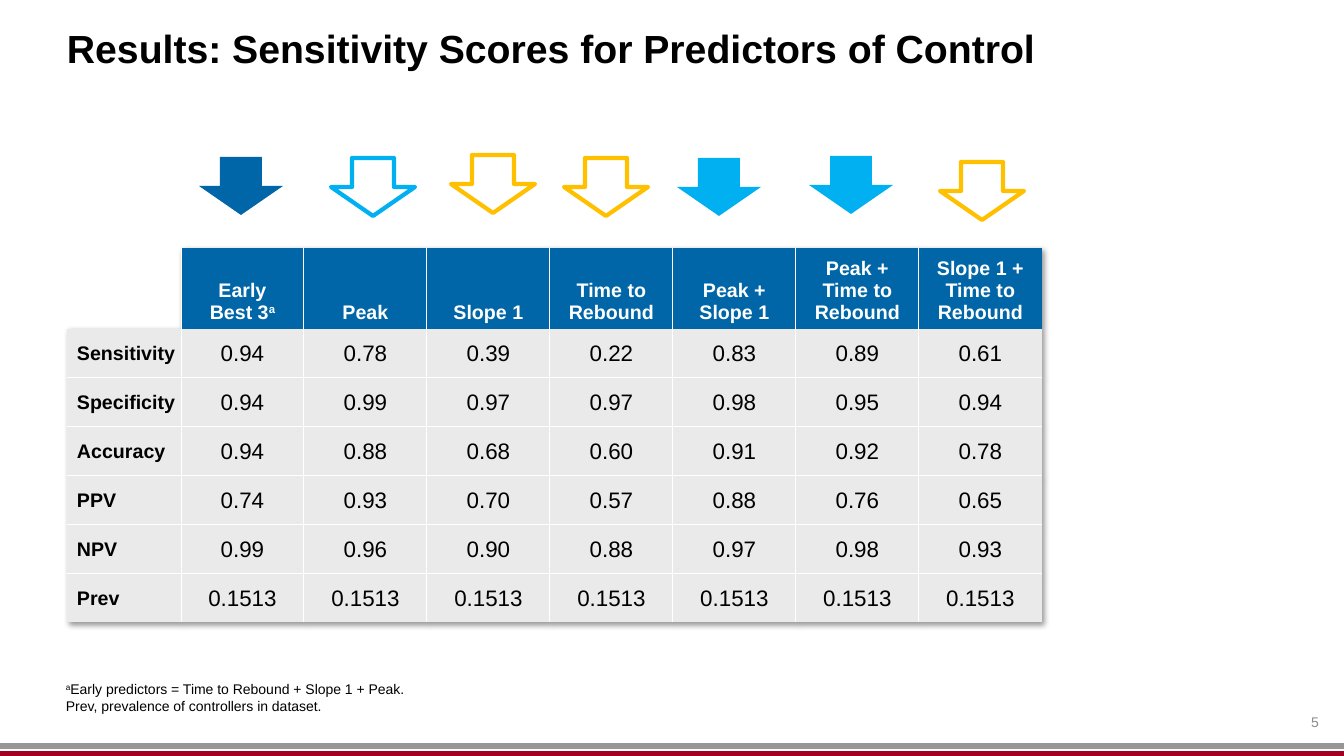
from lxml.etree import SubElement
from pptx import Presentation
from pptx.dml.color import RGBColor
from pptx.enum.shapes import MSO_CONNECTOR, MSO_SHAPE
from pptx.enum.text import MSO_ANCHOR, PP_ALIGN
from pptx.oxml import parse_xml
from pptx.oxml.ns import nsdecls, qn
from pptx.util import Pt

PX = 914400 / 100.8
SLIDE_SIZE = (1344, 756)

TITLE = "Results: Sensitivity Scores for Predictors of Control"
FOOTNOTE = ("^aEarly predictors = Time to Rebound + Slope 1 + Peak.\n"
            "Prev, prevalence of controllers in dataset.")
PAGE_NUMBER = "5"
PREDICTORS = ["Early\nBest 3^a", "Peak", "Slope 1", "Time to Rebound",
              "Peak + Slope 1", "Peak + Time to Rebound",
              "Slope 1 + Time to Rebound"]
SCORES = [
    ("Sensitivity", "0.94", "0.78", "0.39", "0.22", "0.83", "0.89", "0.61"),
    ("Specificity", "0.94", "0.99", "0.97", "0.97", "0.98", "0.95", "0.94"),
    ("Accuracy", "0.94", "0.88", "0.68", "0.60", "0.91", "0.92", "0.78"),
    ("PPV", "0.74", "0.93", "0.70", "0.57", "0.88", "0.76", "0.65"),
    ("NPV", "0.99", "0.96", "0.90", "0.88", "0.97", "0.98", "0.93"),
    ("Prev",) + ("0.1513",) * len(PREDICTORS),
]
BLUE, SKY, GOLD = "0066A8", "00B0F0", "FFC000"
BLACK, WHITE, CELL_GREY = "000000", "FFFFFF", "EAEAEA"
ARROWS = [
    (199, 157, BLUE, True),
    (331, 158, SKY, False),
    (451, 155, GOLD, False),
    (564, 158, GOLD, False),
    (677, 158, SKY, True),
    (809, 156, SKY, True),
    (940, 162, GOLD, False),
]
ARROW_SIZE = (84, 58)
FOOTER_RULES = [(746, "969696"), (754, "A50021")]
TABLE_LEFT, TABLE_TOP = 67, 248
LABEL_WIDTH, SCORE_WIDTH = 114, 123
HEADER_HEIGHT, ROW_HEIGHT = 60, 49

TITLE_FORMAT = {"size": Pt(28), "bold": True}
NOTE_FORMAT = {"size": Pt(10), "bold": False}
HEADING_FORMAT = {"size": Pt(14), "bold": True}
SCORE_FORMAT = {"size": Pt(16), "bold": False}


def px(*lengths):
    return [round(length * PX) for length in lengths]


def rgb(hex_color):
    return RGBColor.from_string(hex_color)


def apply(target, values):
    for name, value in values.items():
        setattr(target, name, value)


def margins(left, top, right, bottom):
    names = ("margin_left", "margin_top", "margin_right", "margin_bottom")
    return dict(zip(names, px(left, top, right, bottom)))


def write(frame, text, font_format, color, align):
    for number, line in enumerate(text.split("\n")):
        paragraph = frame.add_paragraph() if number else frame.paragraphs[0]
        paragraph.alignment = align
        first, *marked = line.split("^")
        pieces = [(first, False)]
        for piece in marked:
            pieces += [(piece[0], True), (piece[1:], False)]
        for words, raised in pieces:
            if not words:
                continue
            run = paragraph.add_run()
            run.text = words
            apply(run.font, {"name": "Arial", **font_format})
            run.font.color.rgb = rgb(color)
            if raised:
                run._r.get_or_add_rPr().set("baseline", "30000")


def add_text(slide, box, text, font_format, color, align, anchor, insets):
    frame = slide.shapes.add_textbox(*px(*box)).text_frame
    apply(frame, {"word_wrap": True, "vertical_anchor": anchor,
                  **margins(*insets)})
    write(frame, text, font_format, color, align)
    return frame


def add_footer_rule(slide, y, color):
    rule = slide.shapes.add_connector(
        MSO_CONNECTOR.STRAIGHT, *px(0, y, SLIDE_SIZE[0], y))
    rule.line.color.rgb = rgb(color)
    rule.line.width = Pt(4.25)
    SubElement(rule._element.spPr, qn("a:effectLst"))


def add_arrow(slide, left, top, color, filled):
    arrow = slide.shapes.add_shape(
        MSO_SHAPE.DOWN_ARROW, *px(left, top, *ARROW_SIZE))
    arrow.shadow.inherit = False
    if filled:
        arrow.fill.solid()
        arrow.fill.fore_color.rgb = rgb(color)
        arrow.line.fill.background()
    else:
        arrow.fill.background()
        arrow.line.color.rgb = rgb(color)
        arrow.line.width = Pt(3)


def add_borders(cell, sides):
    for side, shown in sides.items():
        border = SubElement(cell._tc.get_or_add_tcPr(), qn(f"a:ln{side}"),
                            w=str(Pt(0.75)))
        if shown:
            paint = SubElement(border, qn("a:solidFill"))
            SubElement(paint, qn("a:srgbClr"), val=WHITE)
        else:
            SubElement(border, qn("a:noFill"))


def add_scores(slide):
    rows = [("", *PREDICTORS), *SCORES]
    last_row, last_column = len(SCORES), len(PREDICTORS)
    width = LABEL_WIDTH + SCORE_WIDTH * last_column
    height = HEADER_HEIGHT + ROW_HEIGHT * last_row
    table = slide.shapes.add_table(
        len(rows), last_column + 1,
        *px(TABLE_LEFT, TABLE_TOP, width, height)).table
    apply(table, {"first_row": False, "horz_banding": False})
    properties = table._tbl.tblPr
    properties.find(qn("a:tableStyleId")).text = (
        "{2D5ABB26-0587-4C30-8999-92F81FD0307C}")
    properties.insert(0, parse_xml(
        f'<a:effectLst {nsdecls("a")}><a:outerShdw blurRad="50800" '
        'dist="38100" dir="2700000" algn="tl" rotWithShape="0">'
        '<a:srgbClr val="000000"><a:alpha val="40000"/></a:srgbClr>'
        '</a:outerShdw></a:effectLst>'))
    for c, column in enumerate(table.columns):
        column.width, = px(SCORE_WIDTH if c else LABEL_WIDTH)
    for r, row in enumerate(table.rows):
        row.height, = px(ROW_HEIGHT if r else HEADER_HEIGHT)

    for r, texts in enumerate(rows):
        for c, text in enumerate(texts):
            cell = table.cell(r, c)
            add_borders(cell, {"L": c > 0, "R": c < last_column,
                               "T": r > 1, "B": 0 < r < last_row})
            if not text:
                cell.fill.background()
                continue
            cell.fill.solid()
            cell.fill.fore_color.rgb = rgb(CELL_GREY if r else BLUE)
            insets = (1 if c else 10, 1, 1, 0) if r else (10, 5, 10, 5)
            anchor = MSO_ANCHOR.MIDDLE if r else MSO_ANCHOR.BOTTOM
            apply(cell, {"vertical_anchor": anchor, **margins(*insets)})
            write(cell.text_frame, text,
                  SCORE_FORMAT if r and c else HEADING_FORMAT,
                  BLACK if r else WHITE,
                  PP_ALIGN.CENTER if c else PP_ALIGN.LEFT)


def main():
    deck = Presentation()
    deck.slide_width, deck.slide_height = px(*SLIDE_SIZE)
    slide = deck.slides.add_slide(deck.slide_layouts[6])
    for rule in FOOTER_RULES:
        add_footer_rule(slide, *rule)
    title = add_text(slide, (67, 0, 1210, 101), TITLE, TITLE_FORMAT, BLACK,
                     PP_ALIGN.LEFT, MSO_ANCHOR.MIDDLE, (0, 5, 10, 5))
    title.paragraphs[0].line_spacing = 0.95
    add_text(slide, (66, 680, 1210, 34), FOOTNOTE, NOTE_FORMAT, BLACK,
             PP_ALIGN.LEFT, MSO_ANCHOR.BOTTOM, (0, 0, 0, 0))
    add_text(slide, (1277, 690, 42, 40), PAGE_NUMBER, NOTE_FORMAT, "8C8C8C",
             PP_ALIGN.RIGHT, MSO_ANCHOR.BOTTOM, (0, 0, 0, 0))
    add_scores(slide)
    for arrow in ARROWS:
        add_arrow(slide, *arrow)
    deck.save("out.pptx")


if __name__ == "__main__":
    main()
